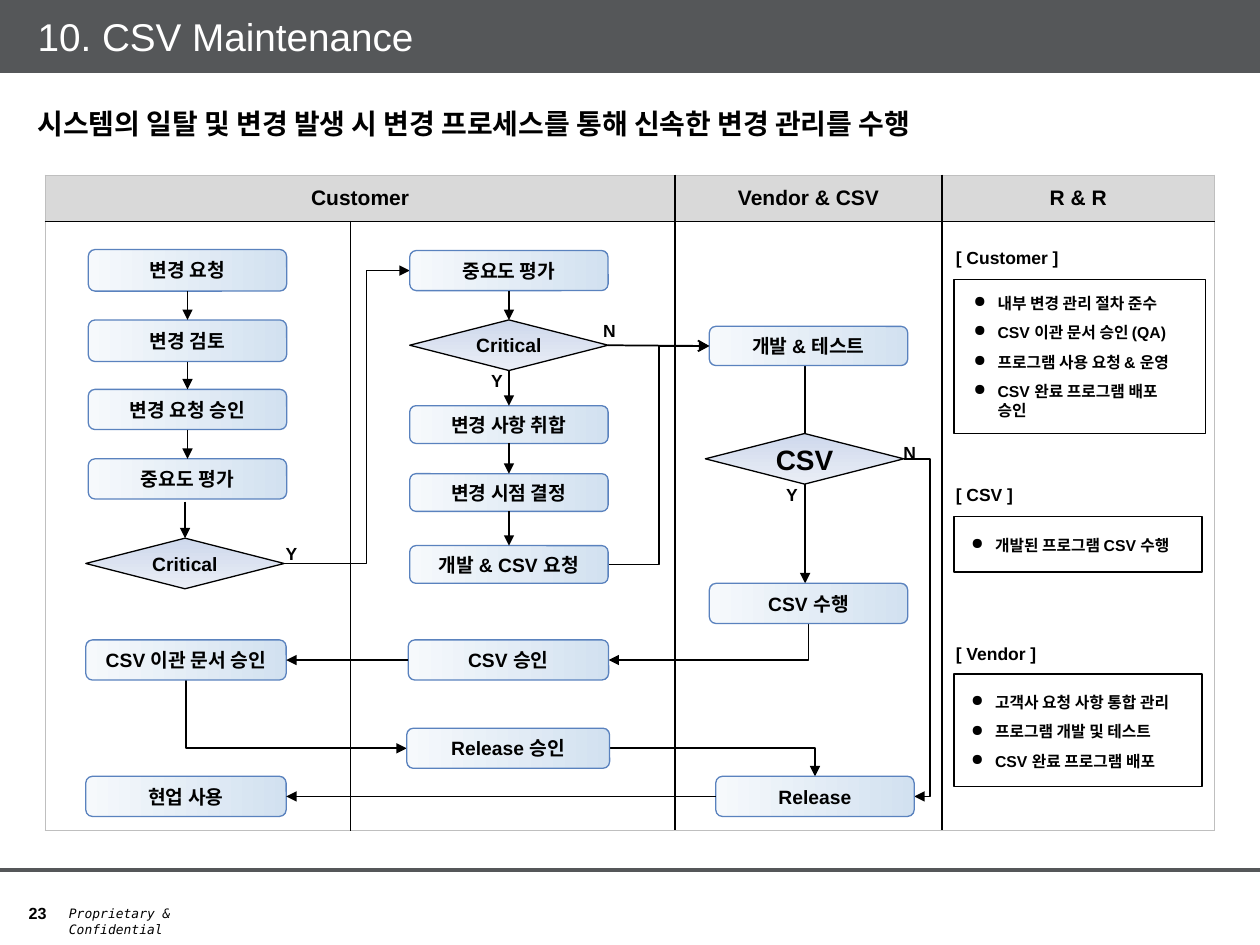
"""Build the CSV maintenance change-process slide."""
from lxml import etree
from pptx import Presentation
from pptx.dml.color import RGBColor
from pptx.enum.shapes import MSO_CONNECTOR, MSO_SHAPE
from pptx.enum.text import MSO_ANCHOR, PP_ALIGN
from pptx.oxml.ns import qn
from pptx.util import Cm, Pt

RECT, ROUND, DECISION = MSO_SHAPE.RECTANGLE, MSO_SHAPE.ROUNDED_RECTANGLE, MSO_SHAPE.FLOWCHART_DECISION
STRAIGHT, ELBOW = MSO_CONNECTOR.STRAIGHT, MSO_CONNECTOR.ELBOW
TOP, MIDDLE, BOTTOM = MSO_ANCHOR.TOP, MSO_ANCHOR.MIDDLE, MSO_ANCHOR.BOTTOM
LEFT, CENTER = PP_ALIGN.LEFT, PP_ALIGN.CENTER
UP, WEST, DOWN, EAST = range(4)


class Theme:
    font, mono = "Arial", "DejaVu Sans Mono"
    ink, white, bar, header, frame = "000000", "FFFFFF", "555759", "D9D9D9", "BFBFBF"
    step_line = "5A82BE"
    step_fill, decision_fill = ("F6F9FC", "D2E1F0", 0), ("CED8EC", "EAEEF6", 270)
    title, subtitle, heading, step, label, duty, page, notice = 22.1, 16, 12, 11, 10, 9, 9.2, 7.4


TITLE = "10. CSV Maintenance"
SUBTITLE = "시스템의 일탈 및 변경 발생 시 변경 프로세스를 통해 신속한 변경 관리를 수행"
HEADINGS = ["Customer", "", "Vendor & CSV", "R & R"]
LANE_WIDTHS, ROW_HEIGHTS = (6.15, 6.55, 5.38, 5.49), (0.94, 12.27)
LANE_RULES = [(Theme.frame, 0.75), (Theme.ink, 0.75), (Theme.ink, 1.5), (Theme.ink, 1.5), (Theme.frame, 0.75)]
ROW_RULES = [(Theme.frame, 0.75), (Theme.ink, 1), (Theme.frame, 0.75)]

STEPS = {
    "request": ("변경 요청", 1.78, 5.03, 4, 0.84),
    "review": ("변경 검토", 1.78, 6.45, 4, 0.84),
    "approval": ("변경 요청 승인", 1.78, 7.85, 4, 0.81),
    "rating": ("중요도 평가", 1.78, 9.25, 4, 0.81),
    "transfer": ("CSV 이관 문서 승인", 1.73, 12.9, 4.04, 0.81),
    "use": ("현업 사용", 1.73, 15.65, 4.04, 0.81),
    "second rating": ("중요도 평가", 8.26, 5.05, 4, 0.81),
    "collection": ("변경 사항 취합", 8.26, 8.18, 4, 0.76),
    "timing": ("변경 시점 결정", 8.26, 9.55, 4, 0.76),
    "order": ("개발 & CSV 요청", 8.26, 11, 4, 0.76),
    "csv approval": ("CSV 승인", 8.23, 12.9, 4.04, 0.81),
    "release approval": ("Release 승인", 8.2, 14.68, 4.09, 0.81),
    "development": ("개발 & 테스트", 14.3, 6.58, 4, 0.79),
    "csv run": ("CSV 수행", 14.3, 11.76, 4, 0.81),
    "release": ("Release", 14.43, 15.65, 4, 0.81),
}
DECISIONS = {
    "critical": ("Critical", 1.73, 10.85, 4, 1.02),
    "second critical": ("Critical", 8.26, 6.45, 4, 1.02),
    "csv": ("CSV", 14.22, 8.74, 4, 1.02),
}
LINKS = [
    ("request", DOWN, "review", UP), ("review", DOWN, "approval", UP),
    ("approval", DOWN, "rating", UP), ("second rating", DOWN, "second critical", UP),
    ("second critical", DOWN, "collection", UP), ("collection", DOWN, "timing", UP),
    ("timing", DOWN, "order", UP), ("second critical", EAST, "development", WEST),
    ("csv approval", WEST, "transfer", EAST), ("release", WEST, "use", EAST),
]
BENDS = [
    ("critical", EAST, "second rating", WEST, 7.39),
    ("order", EAST, "development", WEST, 13.28),
    ("release approval", EAST, "release", UP, 16.43),
    ("transfer", DOWN, "release approval", WEST, 3.75),
    ("csv", EAST, "release", EAST, 18.75),
    ("csv run", DOWN, "csv approval", EAST, 16.3),
]
DROPS = [((3.73, 10.11), (3.73, 10.85)), ((16.23, 7.37), (16.23, 11.76))]
ANSWERS = [("Y", 5.51, 10.82), ("Y", 9.65, 7.34), ("N", 11.91, 6.32), ("Y", 15.6, 9.63), ("N", 17.96, 8.79)]
ROLES = [
    ("[ Customer ]", 4.85, (5.64, 5.08, 3.1), (19.38, 5.79),
     ["내부 변경 관리 절차 준수", "CSV 이관 문서 승인 (QA)", "프로그램 사용 요청 & 운영", "CSV 완료 프로그램 배포 승인"]),
    ("[ CSV ]", 9.63, (10.41, 5, 1.12), (19.33, 10.67), ["개발된 프로그램 CSV 수행"]),
    ("[ Vendor ]", 12.83, (13.59, 5, 2.26), (19.33, 13.84),
     ["고객사 요청 사항 통합 관리", "프로그램 개발 및 테스트", "CSV 완료 프로그램 배포"]),
]


def rgb(color):
    return RGBColor.from_string(color)


def write(frame, lines, size, color=Theme.ink, font=Theme.font, bold=True, italic=False,
          align=LEFT, anchor=TOP, wrap=True, bullet=False):
    frame.text = "\n".join(lines)
    frame.word_wrap, frame.vertical_anchor = wrap, anchor
    for paragraph in frame.paragraphs:
        paragraph.alignment = align
        if bullet:
            properties = paragraph._p.get_or_add_pPr()
            properties.set("marL", str(Cm(0.48)))
            properties.set("indent", str(-Cm(0.48)))
            etree.SubElement(properties, qn("a:buChar"), char="●")
            paragraph.space_after = Pt(6)
        for run in paragraph.runs:
            run.font.name, run.font.size, run.font.color.rgb = font, Pt(size), rgb(color)
            run.font.bold, run.font.italic = bold, italic


def add_text(slide, place, lines, size, **style):
    frame = slide.shapes.add_textbox(*map(Cm, place)).text_frame
    write(frame, lines, size, **style)


def add_box(slide, outline, place, fill, line=None):
    box = slide.shapes.add_shape(outline, *map(Cm, place))
    box.shadow.inherit = False
    if isinstance(fill, tuple):
        box.fill.gradient()
        box.fill.gradient_angle = fill[2]
        for stop, color in zip(box.fill.gradient_stops, fill):
            stop.color.rgb = rgb(color)
    else:
        box.fill.solid()
        box.fill.fore_color.rgb = rgb(fill)
    if line:
        box.line.color.rgb, box.line.width = rgb(line), Pt(0.75)
    else:
        box.line.fill.background()
    return box


def add_line(slide, start, end, kind=STRAIGHT, color=Theme.ink, width=1, head="triangle"):
    line = slide.shapes.add_connector(kind, *map(Cm, (*start, *end)))
    line.line.color.rgb, line.line.width = rgb(color), Pt(width)
    if head:
        etree.SubElement(line.line._get_or_add_ln(), qn("a:tailEnd"), type=head)
    etree.SubElement(line._element.spPr, qn("a:effectLst"))
    return line


def port(name, side):
    _, left, top, width, height = (STEPS | DECISIONS)[name]
    across, down = ((0.5, 0), (0, 0.5), (0.5, 1), (1, 0.5))[side]
    return left + across * width, top + down * height


def add_bend(slide, start, end, bend):
    geometry = add_line(slide, start, end, ELBOW)._element.spPr.find(qn("a:prstGeom"))
    share = (bend - start[0]) / (end[0] - start[0])
    if abs(share - 1) < 0.01:
        geometry.set("prst", "bentConnector2")
    else:
        guides = geometry.find(qn("a:avLst"))
        etree.SubElement(guides, qn("a:gd"), name="adj1", fmla=f"val {round(share * 100000)}")


def add_lanes(slide):
    place = map(Cm, (0.91, 3.53, sum(LANE_WIDTHS), sum(ROW_HEIGHTS)))
    table = slide.shapes.add_table(2, 4, *place).table
    for column, width in zip(table.columns, LANE_WIDTHS):
        column.width = Cm(width)
    for r, height in enumerate(ROW_HEIGHTS):
        table.rows[r].height = Cm(height)
        for c, heading in enumerate(HEADINGS):
            cell = table.cell(r, c)
            rules = (LANE_RULES[c], LANE_RULES[c + 1], ROW_RULES[r], ROW_RULES[r + 1])
            for side, (color, width) in zip("LRTB", rules):
                border = etree.SubElement(cell._tc.get_or_add_tcPr(), qn(f"a:ln{side}"), w=str(Pt(width)))
                etree.SubElement(etree.SubElement(border, qn("a:solidFill")), qn("a:srgbClr"), val=color)
            if r == 0:
                cell.fill.solid()
                cell.fill.fore_color.rgb = rgb(Theme.header)
                write(cell.text_frame, [heading], Theme.heading, align=CENTER)
                cell.vertical_anchor = MIDDLE
            else:
                cell.fill.background()
    table.cell(0, 0).merge(table.cell(0, 1))


def add_flow(slide):
    for start, end in DROPS:
        add_line(slide, start, end)
    for origin, leave, target, enter, bend in BENDS:
        add_bend(slide, port(origin, leave), port(target, enter), bend)
    nodes = {}
    for group, outline, fill, line in ((STEPS, ROUND, Theme.step_fill, Theme.step_line),
                                       (DECISIONS, DECISION, Theme.decision_fill, Theme.ink)):
        for name, (caption, *place) in group.items():
            nodes[name] = add_box(slide, outline, place, fill, line)
            size = Theme.subtitle if name == "csv" else Theme.step
            write(nodes[name].text_frame, [caption], size, align=CENTER, anchor=MIDDLE, wrap=False)
    for origin, leave, target, enter in LINKS:
        head = "arrow" if target == "development" else "triangle"
        link = add_line(slide, port(origin, leave), port(target, enter), head=head)
        link.begin_connect(nodes[origin], leave)
        link.end_connect(nodes[target], enter)
    for answer, left, top in ANSWERS:
        add_text(slide, (left, top, 0.72, 0.66), [answer], Theme.label, wrap=False)


def add_roles(slide):
    for role, role_top, (top, width, height), (left, duties_top), duties in ROLES:
        add_box(slide, RECT, (19.23, top, width, height), Theme.white, Theme.ink)
        add_text(slide, (19.02, role_top, 2.6, 0.66), [role], Theme.label, wrap=False)
        add_text(slide, (left, duties_top, 4.82, 0.6 * len(duties)), duties, Theme.duty, bullet=True)


def main():
    deck = Presentation()
    deck.slide_width, deck.slide_height = Cm(25.4), Cm(19.05)
    slide = deck.slides.add_slide(deck.slide_layouts[6])
    add_text(slide, (0.33, 17.73, 3.63, 0.99), ["23"], Theme.page, anchor=BOTTOM)
    add_text(slide, (1.14, 18.14, 3.51, 0.58), ["Proprietary & Confidential"], Theme.notice,
             font=Theme.mono, bold=False, italic=True)
    add_line(slide, (0, 17.53), (25.4, 17.53), color=Theme.bar, width=2.25, head=None)
    banner = add_box(slide, RECT, (0, 0, 25.4, 1.47), Theme.bar)
    banner.text_frame.margin_left = Cm(0.76)
    write(banner.text_frame, [TITLE], Theme.title, color=Theme.white, bold=False, anchor=MIDDLE)
    add_text(slide, (0.51, 2.03, 24.8, 0.94), [SUBTITLE], Theme.subtitle)
    add_lanes(slide)
    add_flow(slide)
    add_roles(slide)
    deck.save("out.pptx")


if __name__ == "__main__":
    main()
